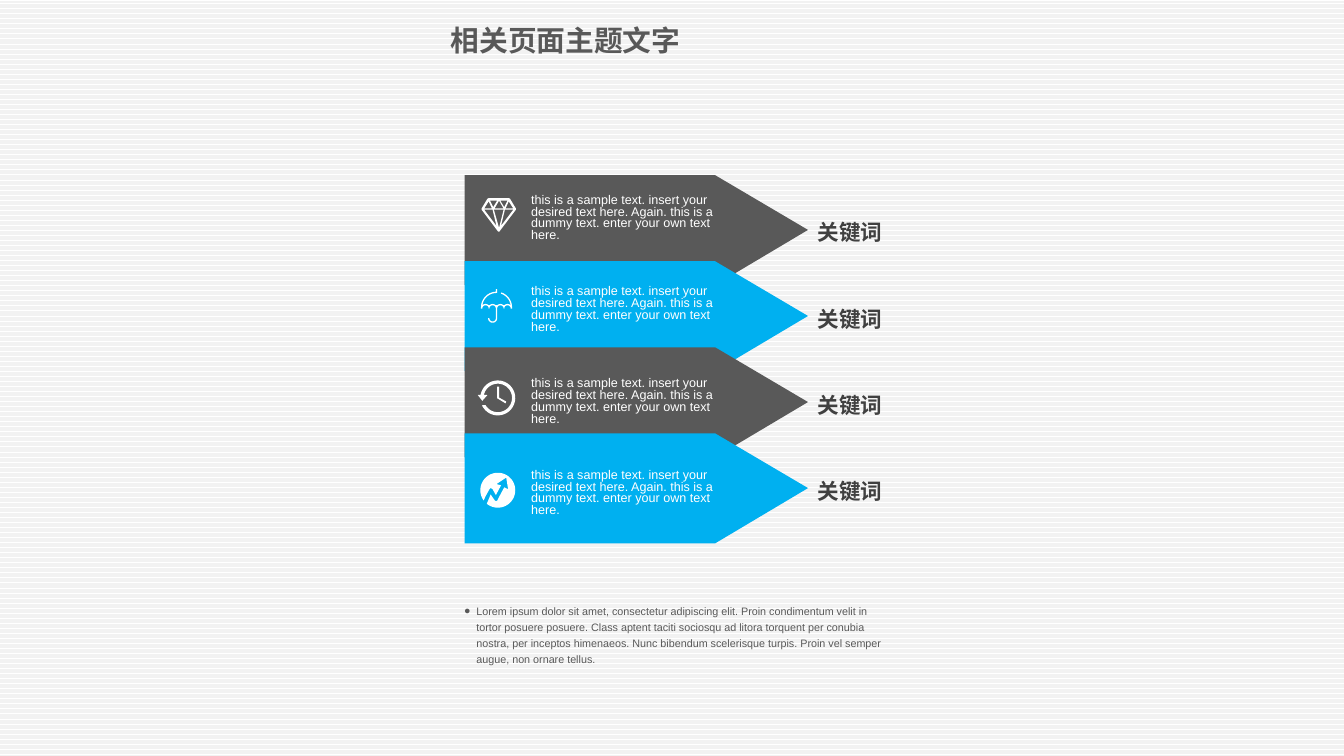
"""Build a slide with four stacked arrows, icons, keywords and a closing note."""
from math import cos, radians, sin

from lxml import etree
from pptx import Presentation
from pptx import util as u
from pptx.dml.color import RGBColor
from pptx.enum import dml, shapes, text
from pptx.oxml import ns

COLORS = {
    "white": "FFFFFF",
    "stripe": "F2F2F2",
    "gray": "595959",
    "dark": "404040",
    "blue": "00B0F0",
}
RGB = {name: RGBColor.from_string(value) for name, value in COLORS.items()}
CJK = "Noto Sans CJK SC"


def add_text(sp, words, *, at, size, color, leading, font="Arial", bold=False, inset=None):
    """Place a shape and write one formatted paragraph in it."""
    sp.left, sp.top, sp.width, sp.height = [u.Cm(v) for v in at]
    tf = sp.text_frame
    tf.word_wrap = True
    tf.auto_size = text.MSO_AUTO_SIZE.NONE
    tf.vertical_anchor = text.MSO_ANCHOR.TOP
    if inset is not None:
        tf.margin_left = tf.margin_top = tf.margin_right = tf.margin_bottom = u.Cm(inset)
    p = tf.paragraphs[0]
    p.alignment = text.PP_ALIGN.LEFT
    p.line_spacing = u.Pt(leading)
    p.space_before = u.Pt(0)
    r = p.add_run()
    r.text = words
    r.font.name = font
    r.font.size = u.Pt(size)
    r.font.bold = bold
    r.font.color.rgb = RGB[color]
    etree.SubElement(r.font._element, ns.qn("a:ea")).set("typeface", CJK)
    return p


def arc(cx, cy, radius, start, end, steps=24):
    """Return points along an arc, with angles in degrees clockwise from the right."""
    angles = [radians(start + (end - start) * i / steps) for i in range(steps + 1)]
    return [(cx + radius * cos(a), cy + radius * sin(a)) for a in angles]


prs = Presentation()
prs.slide_width, prs.slide_height = u.Cm(52.81), u.Cm(29.69)
s = prs.slides.add_slide(prs.slide_layouts[1])

backdrop = s.shapes.add_shape(shapes.MSO_SHAPE.RECTANGLE, 0, 0, prs.slide_width, prs.slide_height)
backdrop.shadow.inherit = False
backdrop.line.fill.background()
backdrop.fill.patterned()
backdrop.fill.pattern = dml.MSO_PATTERN.NARROW_HORIZONTAL
backdrop.fill.fore_color.rgb = RGB["stripe"]
backdrop.fill.back_color.rgb = RGB["white"]
s.shapes._spTree.insert(2, backdrop._element)

add_text(s.shapes.title, "相关页面主题文字", at=(17.45, 0.76, 11.94, 1.63),
         size=32, color="gray", leading=38.4, font=CJK, bold=True)

arrow = [(0, 0), (9.84, 0), (13.49, 2.15), (9.84, 4.32), (0, 4.32)]

diamond = [
    [(28, -10), (19, -25), (17, -26), (-14, -26), (-16, -25), (-25, -10), (-25, -8),
     (0, 25), (1, 26), (2, 26), (3, 25), (28, -8)],
    [(9, -8), (2, 20), (-6, -8)],
    [(-5, -10), (2, -22), (9, -10)],
    [(4, -22), (15, -22), (10, -12)],
    [(-7, -12), (-12, -22), (-1, -22)],
    [(-2, 17), (-21, -8), (-8, -8)],
    [(11, -8), (24, -8), (5, 17)],
    [(24, -10), (12, -10), (17, -21)],
    [(-14, -21), (-9, -10), (-21, -10)],
]
scallops = (-19, -8, 4, 15)
upper_edge = [pt for x in scallops for pt in arc(x, 3, 7, 230, 310, 8)]
lower_edge = [arc(x, 3, 5, 360, 180, 12) for x in scallops]
umbrella = [
    arc(-2, 1, 24, 180, 268) + [(-3, -27), (-1, -27), (-1, -21)]
    + arc(-2, 1, 22, 270, 188) + upper_edge
    + arc(-2, 1, 22, 352, 288) + arc(-2, 1, 24, 288, 360) + [(22, 3)]
    + lower_edge[3] + lower_edge[2]
    + arc(-8, 18, 7, 0, 180) + arc(-8, 18, 5, 180, 0)
    + lower_edge[1] + lower_edge[0] + [(-26, 3)],
]
clock = [
    arc(0, -0.5, 27, 190, 515, 72) + arc(0, -0.5, 22, 510, 192, 72)
    + [(-16, -5), (-24, 4), (-31, -5)],
    [(-1, -18), (-1, 0), (12, 8), (13, 5), (2, -1), (2, -18)],
]
trend = [
    arc(0, 0.5, 27, 144, 489, 72)
    + [(-11, 7), (-7, 13), (-4, 17), (-1, 17), (3, 9), (10, -4), (16, -1), (13, -19),
       (-2, -9), (5, -7), (-3, 8), (-8, -1), (-11, -3), (-13, -1), (-19, 10)],
]

outlines = [(("gray", "blue")[i % 2], 18.26, 6.88 + 3.38 * i, 1, [arrow]) for i in range(4)]
outlines += [("white", 19.56, 8.44 + 3.6 * i, 0.0254, icon)
             for i, icon in enumerate((diamond, umbrella, clock, trend))]

for color, left, top, unit, contours in outlines:
    placed = [[(u.Cm(left + x * unit), u.Cm(top + y * unit)) for x, y in c] for c in contours]
    builder = s.shapes.build_freeform(*placed[0][0])
    builder.add_line_segments(placed[0][1:])
    for contour in placed[1:]:
        builder.move_to(*contour[0])
        builder.add_line_segments(contour[1:])
    sp = builder.convert_to_shape()
    sp.shadow.inherit = False
    sp.line.fill.background()
    sp.fill.solid()
    sp.fill.fore_color.rgb = RGB[color]

sample = ("this is a sample text. insert your desired text here. Again. "
          "this is a dummy text. enter your own text here.")
for i in range(4):
    add_text(s.shapes.add_textbox(0, 0, 0, 0), sample, at=(20.62, 7.52 + 3.6 * i, 8.13, 2.11),
             size=14, color="white", leading=13.3)
    add_text(s.shapes.add_textbox(0, 0, 0, 0), "关键词", at=(31.88, 8.51 + 3.39 * i, 3.94, 1.24),
             size=24, color="dark", leading=28, font="Calibri", bold=True)

note = ("Lorem ipsum dolor sit amet, consectetur adipiscing elit. Proin condimentum velit in "
        "tortor posuere posuere. Class aptent taciti sociosqu ad litora torquent per conubia "
        "nostra, per inceptos himenaeos. Nunc bibendum scelerisque turpis. Proin vel semper "
        "augue, non ornare tellus.")
p = add_text(s.placeholders[1], note, at=(18.24, 23.62, 16.66, 2.57),
             size=12, color="gray", leading=18, inset=0)
pPr = p._p.get_or_add_pPr()
pPr.set("marL", str(u.Cm(0.48)))
pPr.set("indent", str(-u.Cm(0.48)))
etree.SubElement(pPr, ns.qn("a:buChar")).set("char", "●")

prs.save("out.pptx")
